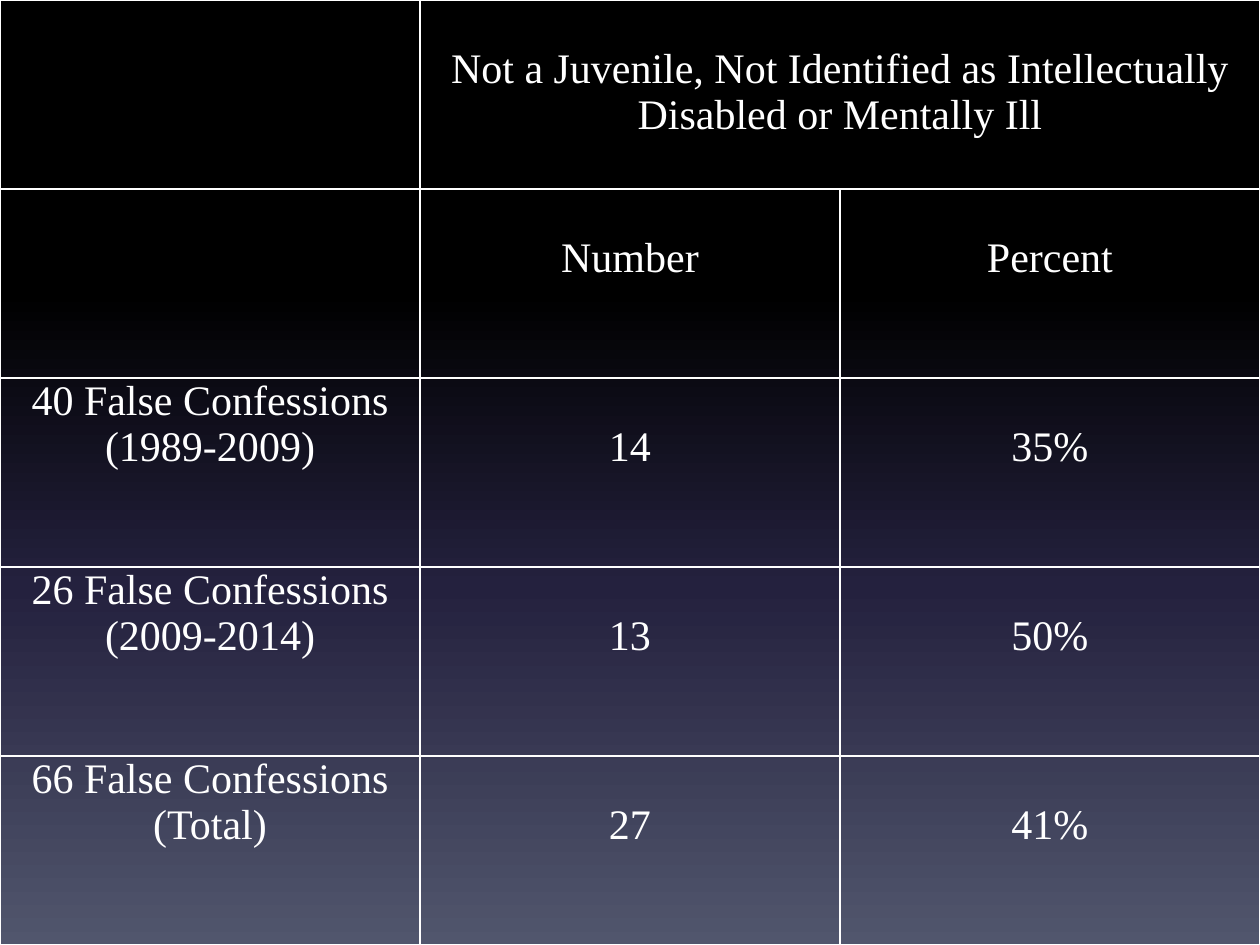
from lxml.etree import SubElement as Sub
from pptx import Presentation
from pptx.dml.color import RGBColor as RGB
from pptx.enum.text import PP_ALIGN as AL
from pptx.oxml.ns import qn
from pptx.util import Emu, Pt

COLORS = {"black": "000000", "indigo": "24213E", "slate": "51566D", "white": "FFFFFF"}
STOPS = [(0, "black"), (31, "black"), (62, "indigo"), (100, "slate")]
FONT = {"name": "Times New Roman", "size": Pt(24)}
ROWS = [
    ["", "Not a Juvenile, Not Identified as Intellectually Disabled or Mentally Ill", ""],
    ["", "Number", "Percent"],
    ["40 False Confessions (1989-2009)", "14", "35%"],
    ["26 False Confessions (2009-2014)", "13", "50%"],
    ["66 False Confessions (Total)", "27", "41%"],
]
W, H = 1260, 945
PAD, LINE = 9, 46


def px(n):
    """Convert pixels to EMU."""
    return Emu(round(n * 914400 / 126))


def set_background(s):
    """Fill the slide with a vertical gradient."""
    fill = s.background.fill
    fill.gradient()
    fill.gradient_angle = 270
    stops = s._element.find(".//" + qn("a:gsLst"))
    for gs in list(stops):
        stops.remove(gs)
    for pos, color in STOPS:
        gs = Sub(stops, qn("a:gs"), pos=str(pos * 1000))
        Sub(gs, qn("a:srgbClr"), val=COLORS[color])


def set_borders(cell):
    """Draw a thin white line on each side of a cell."""
    tc_pr = cell._tc.get_or_add_tcPr()
    for side in ("lnL", "lnR", "lnT", "lnB"):
        ln = Sub(tc_pr, qn("a:" + side), w=str(Pt(1)))
        Sub(Sub(ln, qn("a:solidFill")), qn("a:srgbClr"), val=COLORS["white"])


def format_cell(cell, text, top):
    """Style one cell and write its centred text."""
    set_borders(cell)
    cell.fill.background()
    margins = {"margin_left": px(PAD), "margin_right": px(PAD),
               "margin_top": px(top), "margin_bottom": 0}
    for key, value in margins.items():
        setattr(cell, key, value)
    if text:
        p = cell.text_frame.paragraphs[0]
        p.alignment = AL.CENTER
        r = p.add_run()
        r.text = text
        for key, value in FONT.items():
            setattr(r.font, key, value)
        r.font.color.rgb = RGB.from_string(COLORS["white"])


def add_confessions_table(s, x, y, w, h):
    """Place the table of false confessions in the given box."""
    n_rows, n_cols = len(ROWS), len(ROWS[0])
    table = s.shapes.add_table(n_rows, n_cols, px(x), px(y), px(w), px(h)).table
    for key in ("first_row", "horz_banding"):
        setattr(table, key, False)
    for col in table.columns:
        col.width = px(w // n_cols)
    for row, texts in zip(table.rows, ROWS):
        row.height = px(h // n_rows)
        for i, (cell, text) in enumerate(zip(row.cells, texts)):
            format_cell(cell, text, LINE if i else 0)
    table.cell(0, 1).merge(table.cell(0, 2))


def main():
    """Build and save the slide."""
    prs = Presentation()
    prs.slide_width, prs.slide_height = px(W), px(H)
    s = prs.slides.add_slide(prs.slide_layouts[6])
    set_background(s)
    add_confessions_table(s, 0, 0, W, H)
    prs.save("out.pptx")


if __name__ == "__main__":
    main()
